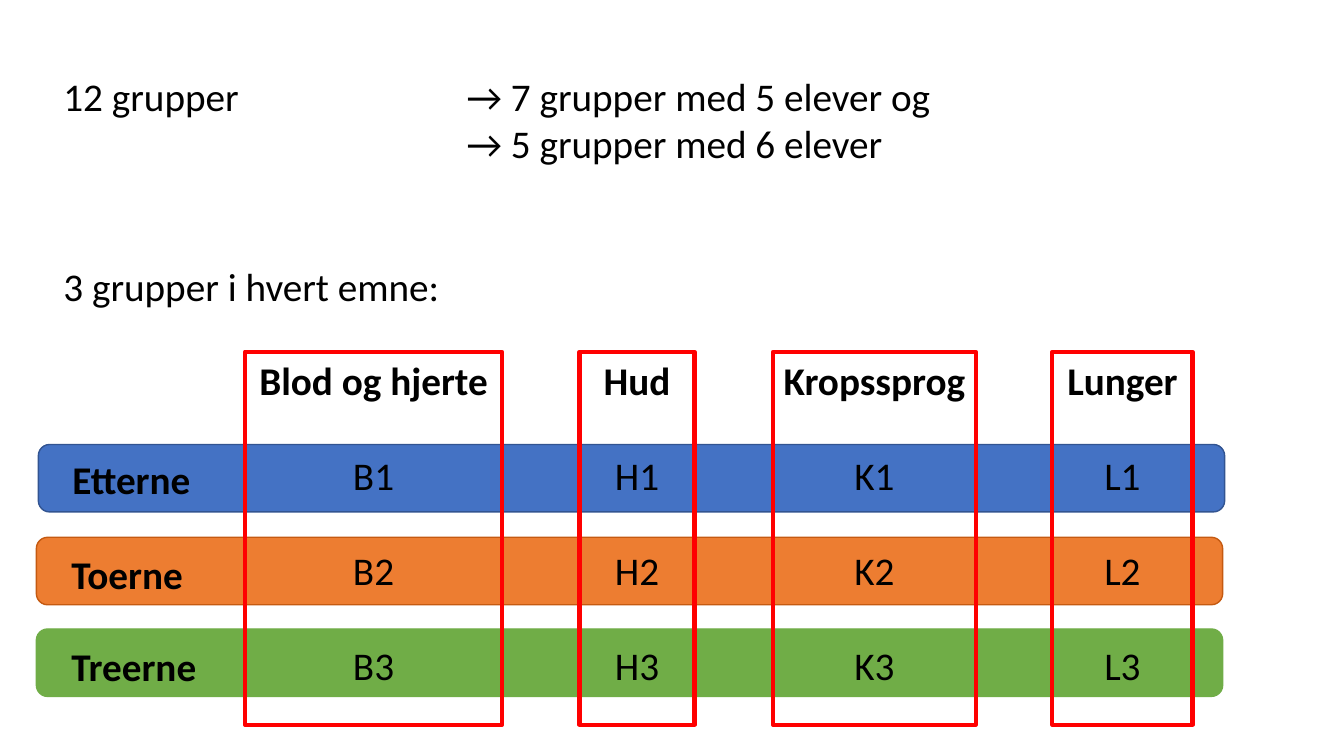
from lxml.etree import SubElement
from pptx import Presentation
from pptx.dml.color import RGBColor
from pptx.enum.shapes import MSO_SHAPE
from pptx.enum.text import MSO_ANCHOR, PP_ALIGN
from pptx.oxml.ns import qn
from pptx.util import Pt


def rgb(value):
    return RGBColor.from_string(value)


class SlideBuilder:
    font, size, color = "Calibri", 28, "000000"
    line_height = 34.2

    def __init__(self, slide):
        self.slide = slide

    def shape(self, kind, box, line, weight, fill=None):
        sp = self.slide.shapes.add_shape(kind, *map(Pt, box))
        sp.shadow.inherit = False
        if fill:
            sp.fill.solid()
            sp.fill.fore_color.rgb = rgb(fill)
        else:
            sp.fill.background()
        sp.line.color.rgb = rgb(line)
        sp.line.width = Pt(weight)
        return sp

    def paragraph(self, tf, index, text, bold=False, blank_lines=0, align=PP_ALIGN.LEFT):
        p = tf.add_paragraph() if index else tf.paragraphs[0]
        p.text = text
        p.alignment = align
        p.space_before = Pt(blank_lines * self.line_height)
        p.font.name, p.font.size, p.font.bold = self.font, Pt(self.size), bold
        p.font.color.rgb = rgb(self.color)
        return p

    def text(self, box, lines, bold=False, tab=None):
        tf = self.slide.shapes.add_textbox(*map(Pt, box)).text_frame
        tf.word_wrap = True
        for i, (text, blank_lines) in enumerate(lines):
            p = self.paragraph(tf, i, text, bold, blank_lines)
            if tab and "\t" in text:
                tabs = SubElement(p._p.get_or_add_pPr(), qn("a:tabLst"))
                SubElement(tabs, qn("a:tab"), pos=str(Pt(tab)), algn="l")

    def bar(self, left, top, fill, line):
        self.shape(MSO_SHAPE.ROUNDED_RECTANGLE, (left, top, 847.4, 48.2), line, 1, fill)

    def column(self, left, width, title, groups):
        sp = self.shape(MSO_SHAPE.RECTANGLE, (left, 251.3, width, 266.4), "FF0000", 3)
        tf = sp.text_frame
        tf.word_wrap = False
        tf.vertical_anchor = MSO_ANCHOR.TOP
        for i, text in enumerate([title, *groups]):
            self.paragraph(tf, i, text, i == 0, min(i, 1), PP_ALIGN.CENTER)


def main():
    prs = Presentation()
    prs.slide_width, prs.slide_height = Pt(960), Pt(540)
    s = SlideBuilder(prs.slides.add_slide(prs.slide_layouts[6]))

    rows = [
        ("Etterne", 27.4, 317.5, 44.6, 321.8, "4472C4", "325491"),
        ("Toerne", 26, 383.8, 43.9, 389.5, "ED7D31", "C55A11"),
        ("Treerne", 26, 449.3, 43.9, 455, "70AD47", "70AD47"),
    ]
    for _, left, top, _, _, fill, line in rows:
        s.bar(left, top, fill, line)

    s.text(
        (38.2, 48.2, 872.6, 198.7),
        [
            ("12 grupper\t→ 7 grupper med 5 elever og", 0),
            ("\t→ 5 grupper med 6 elever", 0),
            ("3 grupper i hvert emne:", 2),
        ],
        tab=288,
    )

    columns = [
        ("Blod og hjerte", 175, 183.6),
        ("Hud", 414, 82.1),
        ("Kropssprog", 552.2, 144.7),
        ("Lunger", 751.7, 100.1),
    ]
    for title, left, width in columns:
        s.column(left, width, title, [f"{title[0]}{n}" for n in range(1, 4)])

    for name, _, _, left, top, _, _ in rows:
        s.text((left, top, 126.7, 41), [(name, 0)], bold=True)

    prs.save("out.pptx")


if __name__ == "__main__":
    main()
